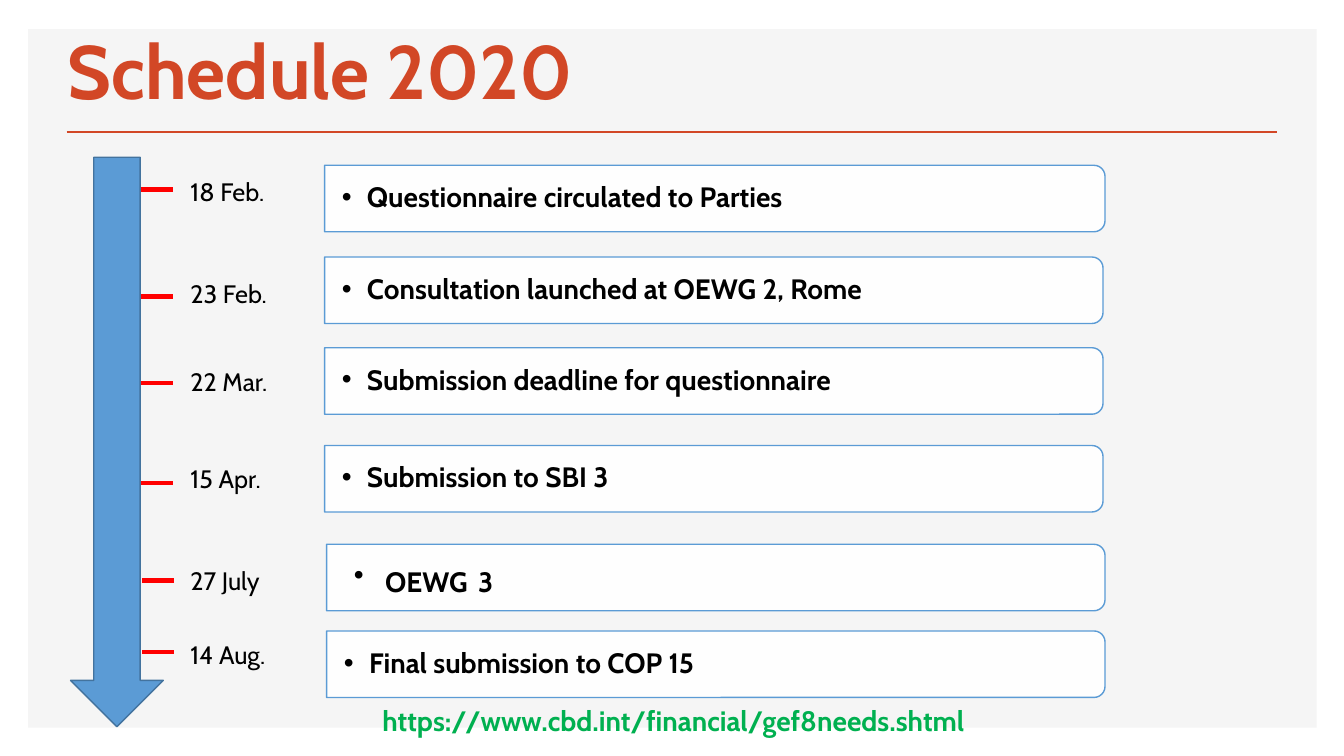
"""Build the Schedule 2020 timeline slide."""
from lxml import etree
from pptx import Presentation
from pptx.dml.color import RGBColor
from pptx.enum.shapes import MSO_CONNECTOR, MSO_SHAPE
from pptx.enum.text import MSO_ANCHOR, MSO_AUTO_SIZE, PP_ALIGN
from pptx.oxml.ns import qn
from pptx.util import Inches, Pt

RECTANGLE = MSO_SHAPE.RECTANGLE
ROUNDED_ENDS = MSO_SHAPE.ROUND_2_SAME_RECTANGLE
DOWN_ARROW = MSO_SHAPE.DOWN_ARROW
STRAIGHT = MSO_CONNECTOR.STRAIGHT
MIDDLE, BOTTOM = MSO_ANCHOR.MIDDLE, MSO_ANCHOR.BOTTOM
LEFT, CENTER = PP_ALIGN.LEFT, PP_ALIGN.CENTER
NO_AUTOFIT = MSO_AUTO_SIZE.NONE

FONT = "Cabin"
ORANGE, BLUE, DARK_BLUE, RED = "D24726", "5B9BD5", "43739E", "FF0000"
GREEN, BLACK, WHITE, GREY = "00B050", "000000", "FFFFFF", "F5F5F5"

TITLE = "Schedule 2020"
LINK = "https://www.cbd.int/financial/gef8needs.shtml"
NARROW, WIDE = (0.16, 0.01, 0.25), (0.26, 0.02, 0.31)
# date, date centre, tick start, tick height, event runs, bar left, bar centre, bar width, padding and indent
MILESTONES = [
    ("18 Feb.", 1.90, 1.40, 1.88, [("Questionnaire circulated to Parties", 20)], 3.22, 1.97, 7.74, NARROW),
    ("23 Feb.", 2.91, 1.40, 2.94, [("Consultation launched at OEWG 2, Rome", 20)], 3.22, 2.88, 7.72, NARROW),
    ("22 Mar.", 3.78, 1.40, 3.80, [("Submission deadline for questionnaire", 20)], 3.22, 3.78, 7.72, NARROW),
    ("15 Apr.", 4.75, 1.40, 4.79, [("Submission to SBI 3", 20)], 3.22, 4.75, 7.72, NARROW),
    ("27 July", 5.76, 1.41, 5.76, [("OEWG", 20), (" ", 33), ("3", 20)], 3.24, 5.73, 7.72, WIDE),
    ("14 Aug.", 6.49, 1.41, 6.47, [("Final submission to COP 15", 20)], 3.24, 6.59, 7.72, NARROW),
]
BAR_HEIGHT, EVENT_HEIGHT, EVENT_WIDTH = 0.66, 0.6, 7.68
DATE_LEFT, DATE_WIDTH, DATE_HEIGHT, TICK = 1.79, 1.0, 0.4, 0.32


def color(code):
    """Turn a hex string into a colour."""
    return RGBColor.from_string(code)


def add_block(page, kind, left, top, width, height, fill, line=None):
    """Add a filled preset shape with an optional thin outline."""
    block = page.shapes.add_shape(kind, Inches(left), Inches(top), Inches(width), Inches(height))
    block.shadow.inherit = False
    block.fill.solid()
    block.fill.fore_color.rgb = color(fill)
    if line:
        block.line.color.rgb = color(line)
        block.line.width = Pt(1)
    else:
        block.line.fill.background()
    return block


def add_rule(page, start, end, height, code, weight):
    """Add a horizontal line."""
    rule = page.shapes.add_connector(STRAIGHT, Inches(start), Inches(height), Inches(end), Inches(height))
    rule.line.color.rgb = color(code)
    rule.line.width = Pt(weight)
    etree.SubElement(rule._element.spPr, qn("a:effectLst"))


def style(span, size, code, bold):
    """Format one run."""
    span.font.name, span.font.size, span.font.bold = FONT, Pt(size), bold
    span.font.color.rgb = color(code)


def add_text(page, left, center, width, height, runs, code=BLACK, bold=True, wrap=True):
    """Add a one-paragraph text box centred on a height."""
    box = page.shapes.add_textbox(Inches(left), Inches(center - height / 2), Inches(width), Inches(height))
    frame = box.text_frame
    frame.word_wrap, frame.vertical_anchor = wrap, MIDDLE
    for words, size in runs:
        span = frame.paragraphs[0].add_run()
        span.text = words
        style(span, size, code, bold)
    return frame


def add_bar(page, left, center, width):
    """Add a translucent white bar with rounded right corners."""
    bar = add_block(page, ROUNDED_ENDS, left + (width - BAR_HEIGHT) / 2, center - width / 2,
                    BAR_HEIGHT, width, WHITE, BLUE)
    bar.rotation = 90
    fill_color = bar._element.spPr.find(qn("a:solidFill"))[0]
    etree.SubElement(fill_color, qn("a:alpha"), val="90000")


def add_event(page, left, center, runs, spacing):
    """Add the bulleted event text of a bar."""
    padding, edge, indent = spacing
    frame = add_text(page, left + 0.01, center, EVENT_WIDTH, EVENT_HEIGHT, runs)
    frame.margin_left = Inches(padding)
    frame.margin_top = frame.margin_right = frame.margin_bottom = Inches(edge)
    para = frame.paragraphs[0]
    para.level, para.line_spacing = 1, 0.9
    properties = para._p.get_or_add_pPr()
    properties.set("marL", str(Inches(indent)))
    properties.set("indent", str(-Inches(indent)))
    after = etree.SubElement(properties, qn("a:spcAft"))
    etree.SubElement(after, qn("a:spcPct"), val="15000")
    etree.SubElement(properties, qn("a:buFont"), typeface="Arial")
    etree.SubElement(properties, qn("a:buChar"), char="•")


def place_title(page):
    """Fill, move and format the title in front of the panel."""
    title = page.shapes.title
    title.left, title.top, title.width, title.height = map(Inches, (0.57, 0.49, 7.52, 0.7))
    frame = title.text_frame
    frame.text = TITLE
    frame.auto_size, frame.vertical_anchor = NO_AUTOFIT, BOTTOM
    para = frame.paragraphs[0]
    para.alignment = LEFT
    style(para.runs[0], 54, ORANGE, True)
    title._element.getparent().append(title._element)


def main():
    """Build and save the deck."""
    deck = Presentation()
    deck.slide_width, deck.slide_height = Inches(13.33), Inches(7.5)
    page = deck.slides.add_slide(deck.slide_layouts[5])
    add_block(page, RECTANGLE, 0.28, 0.29, 12.78, 6.93, GREY)
    add_rule(page, 0.66, 12.67, 1.31, ORANGE, 2)
    place_title(page)
    add_block(page, DOWN_ARROW, 0.7, 1.56, 0.92, 5.65, BLUE, DARK_BLUE)
    for date, date_center, tick_left, tick_height, runs, left, center, width, spacing in MILESTONES:
        add_bar(page, left, center, width)
        add_event(page, left, center, runs, spacing)
        add_rule(page, tick_left, tick_left + TICK, tick_height, RED, 3.25)
        add_text(page, DATE_LEFT, date_center, DATE_WIDTH, DATE_HEIGHT, [(date, 18)], bold=False, wrap=False)
    link = add_text(page, 2.84, 7.15, 7.68, 0.4, [(LINK, 20)], GREEN)
    link.paragraphs[0].alignment = CENTER
    deck.save("out.pptx")


if __name__ == "__main__":
    main()
